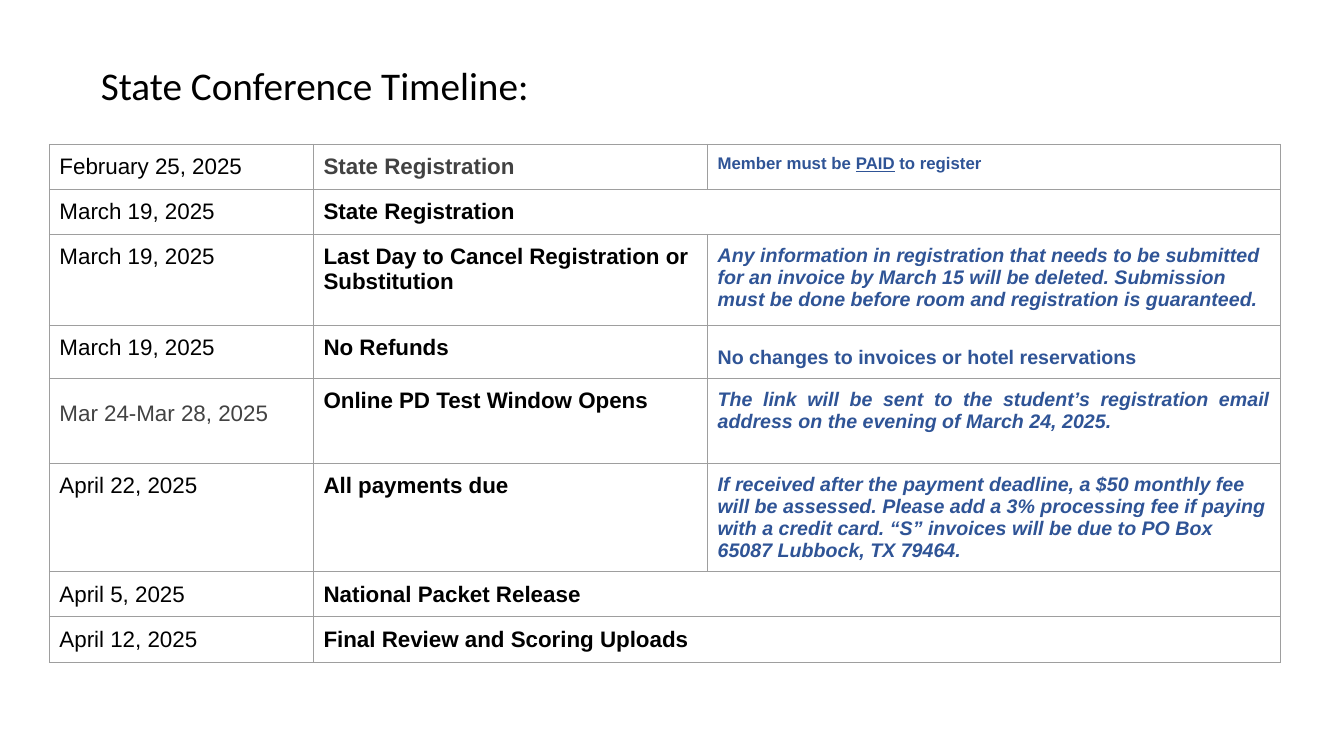
"""Build the State Conference Timeline slide."""
from dataclasses import dataclass

from lxml import etree
from pptx import Presentation
from pptx.dml.color import RGBColor
from pptx.enum.text import MSO_ANCHOR, PP_ALIGN
from pptx.oxml.ns import qn
from pptx.util import Pt

LEFT, JUSTIFY = PP_ALIGN.LEFT, PP_ALIGN.JUSTIFY
TOP = MSO_ANCHOR.TOP


@dataclass(frozen=True)
class Theme:
    """Colours, fonts and type sizes."""
    black: str = "000000"
    grey: str = "424242"
    blue: str = "2F5496"
    white: str = "FFFFFF"
    border: str = "9E9E9E"
    title_font: str = "Calibri"
    body_font: str = "Arial"
    title_size: int = 28
    body_size: int = 16
    note_size: int = 14
    small_size: int = 12
    border_width: float = 0.75
    inset: float = 7.2


THEME = Theme()
HEADING = "State Conference Timeline:"
HEADING_BOX = (64.8, 36.72, 827.28, 61.2)
TABLE_LEFT, TABLE_TOP = 35.3, 103
COLUMN_WIDTHS = (188.64, 281.52, 408.96)

DATE = {"size": THEME.body_size, "color": THEME.black}
EVENT = {**DATE, "bold": True}
NOTE = {"size": THEME.note_size, "color": THEME.blue, "bold": True}
NOTE_ITALIC = {**NOTE, "italic": True}
NOTE_SMALL = {**NOTE, "size": THEME.small_size}

TIMELINE = [
    (32, [("February 25, 2025", DATE),
          ("State Registration", {**EVENT, "color": THEME.grey}),
          (("Member must be ", "PAID", " to register"), {**NOTE_SMALL, "underlined": "PAID"})]),
    (32, [("March 19, 2025", DATE), ("State Registration", EVENT)]),
    (65, [("March 19, 2025", DATE),
          ("Last Day to Cancel Registration or Substitution", EVENT),
          ("Any information in registration that needs to be submitted for an invoice by "
           "March 15 will be deleted. Submission must be done before room and registration "
           "is guaranteed.", NOTE_ITALIC)]),
    (30, [("March 19, 2025", DATE),
          ("No Refunds", EVENT),
          ("No changes to invoices or hotel reservations",
           {**NOTE, "align": JUSTIFY, "spacing": 1.5})]),
    (60.7, [("Mar 24-Mar 28, 2025", {**DATE, "color": THEME.grey, "spacing": 1.5}),
            ("Online PD Test Window Opens", EVENT),
            ("The link will be sent to the student’s registration email address on the "
             "evening of March 24, 2025.", {**NOTE_ITALIC, "align": JUSTIFY})]),
    (65, [("April 22, 2025", DATE),
          ("All payments due", EVENT),
          ("If received after the payment deadline, a $50 monthly fee will be assessed. "
           "Please add a 3% processing fee if paying with a credit card. “S” invoices will "
           "be due to PO Box 65087 Lubbock, TX 79464.", NOTE_ITALIC)]),
    (32, [("April 5, 2025", DATE), ("National Packet Release", EVENT)]),
    (32, [("April 12, 2025", DATE), ("Final Review and Scoring Uploads", EVENT)]),
]


def set_insets(holder):
    """Apply the same inner margin to every side."""
    for side in ("left", "right", "top", "bottom"):
        setattr(holder, f"margin_{side}", Pt(THEME.inset))


def style_run(run, font, size, color, bold=False, italic=False, underline=False):
    """Format one run of text."""
    run.font.name, run.font.size = font, Pt(size)
    run.font.bold, run.font.italic, run.font.underline = bold, italic, underline
    run.font.color.rgb = RGBColor.from_string(color)


def frame_cell(cell):
    """Give a cell its borders, white fill and margins."""
    properties = cell._tc.get_or_add_tcPr()
    for edge in ("a:lnL", "a:lnR", "a:lnT", "a:lnB"):
        line = etree.SubElement(properties, qn(edge), w=str(Pt(THEME.border_width)))
        fill = etree.SubElement(line, qn("a:solidFill"))
        etree.SubElement(fill, qn("a:srgbClr"), val=THEME.border)
    cell.fill.solid()
    cell.fill.fore_color.rgb = RGBColor.from_string(THEME.white)
    cell.vertical_anchor = TOP
    set_insets(cell)


def write_cell(cell, wording, look):
    """Write a cell's wording, given whole or in pieces."""
    paragraph = cell.text_frame.paragraphs[0]
    paragraph.alignment = look.get("align", LEFT)
    paragraph.line_spacing = look.get("spacing", 1.0)
    for piece in (wording,) if isinstance(wording, str) else wording:
        run = paragraph.add_run()
        run.text = piece
        style_run(run, THEME.body_font, look["size"], look["color"], look.get("bold", False),
                  look.get("italic", False), piece == look.get("underlined"))


def add_heading(slide):
    """Place and format the title."""
    title = slide.shapes.title
    title.left, title.top, title.width, title.height = map(Pt, HEADING_BOX)
    frame = title.text_frame
    frame.text = HEADING
    frame.vertical_anchor = TOP
    frame.word_wrap = True
    set_insets(frame)
    frame.paragraphs[0].alignment = LEFT
    style_run(frame.paragraphs[0].runs[0], THEME.title_font, THEME.title_size, THEME.black)


def add_timeline(slide):
    """Build the table, merging the last columns of rows without a note."""
    total_height = sum(height for height, _ in TIMELINE)
    table = slide.shapes.add_table(
        len(TIMELINE), len(COLUMN_WIDTHS), Pt(TABLE_LEFT), Pt(TABLE_TOP),
        Pt(sum(COLUMN_WIDTHS)), Pt(total_height)).table
    table.first_row = table.horz_banding = False
    for column, width in zip(table.columns, COLUMN_WIDTHS):
        column.width = Pt(width)
    for cell in table.iter_cells():
        frame_cell(cell)
    for index, (height, entries) in enumerate(TIMELINE):
        table.rows[index].height = Pt(height)
        if len(entries) < len(COLUMN_WIDTHS):
            table.cell(index, len(entries) - 1).merge(table.cell(index, len(COLUMN_WIDTHS) - 1))
        for position, (wording, look) in enumerate(entries):
            write_cell(table.cell(index, position), wording, look)


def main():
    """Create and save the slide."""
    deck = Presentation()
    deck.slide_width, deck.slide_height = Pt(960), Pt(540)
    slide = deck.slides.add_slide(deck.slide_layouts[5])
    add_heading(slide)
    add_timeline(slide)
    deck.save("out.pptx")


if __name__ == "__main__":
    main()
